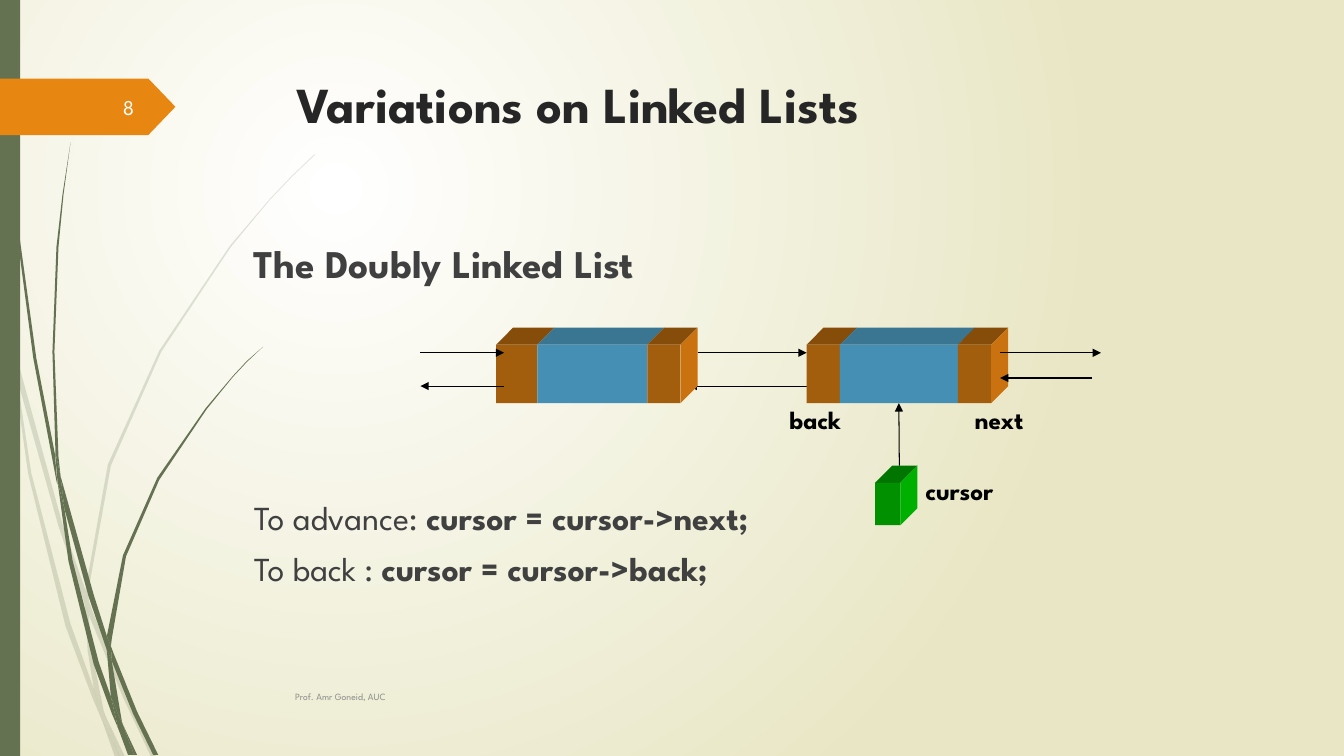
from lxml.etree import SubElement
from pptx import Presentation
from pptx.dml.color import RGBColor
from pptx.enum.shapes import MSO_CONNECTOR, MSO_SHAPE
from pptx.enum.text import MSO_ANCHOR, PP_ALIGN
from pptx.oxml.ns import qn
from pptx.util import Inches, Pt

WIDTH, HEIGHT = 13.33, 7.5
FONT = "League Spartan"
GREEN, ORANGE = "647252", "E78712"
PAPER = ("FFFFFF", "E8E6C4")

# Texts: left, top, width, height, format, paragraphs of (space before, runs)
TITLE = {"size": 36, "bold": True, "color": "262626"}
HEADING = {"size": 28, "bold": True, "color": "404040"}
STEP = {"size": 24, "bold": False, "color": "404040"}
CODE = {**STEP, "bold": True}
LABEL = {"size": 18, "bold": True, "color": "000000"}
FOOTER = {"size": 6.8, "bold": False, "color": "8C8C8C"}
NUMBER = {"size": 15, "bold": False, "color": "FEFFFF"}

BODY = [
    (7.5, [("The Doubly Linked List", HEADING)]),
    (150, [("To advance: ", STEP), ("cursor = cursor->next;", CODE)]),
    (7.5, [("To back : ", STEP), ("cursor = cursor->back;", CODE)]),
]
LABELS = [("next", 9.57, 3.96, 0.73), ("back", 7.73, 3.96, 0.84), ("cursor", 9.08, 4.67, 0.95)]

# Blocks: face colours are front, top, side
POINTER = ("A35E0D", "854C0A", "C9720F")
DATA = ("458FB5", "3A7592", "458FB5")
CURSOR = ("009000", "007600", "00B000")
DEPTH = 0.17
NODE_TOP, NODE_HEIGHT = 3.42, 0.58
FIRST_NODE = (4.92, [(0.41, POINTER), (1.09, DATA), (0.33, POINTER)])
SECOND_NODE = (8, [(0.33, POINTER), (1.17, DATA), (0.33, POINTER)])
CURSOR_BLOCK = (8.68, [(0.25, CURSOR)])
CURSOR_TOP, CURSOR_HEIGHT = 4.79, 0.42

# Links: from x, to x, y
HIDDEN_LINK = (8, 6.83, 3.83)
LINKS = [(6.92, 8, 3.5), (9.92, 10.92, 3.5), (4.17, 5, 3.5), (10.83, 9.92, 3.75), (5, 4.17, 3.83)]

# Grass blades as x, y, x, y, ...
PALE_BLADES = [
    (.11, 3.5, .09, 3.22, 0, 2.82, 0, 2.99, .1, 3.44),
    (.58, 5.22, .84, 5.99, .85, 5.86, .62, 5.2, .14, 3.45, .17, 3.76),
    (.92, 6.07, .88, 5.96, .88, 6.1, 1.23, 6.94, 1.5, 7.51, 1.55, 7.51, 1.27, 6.92),
    (1.19, 7.51, 1.24, 7.51, 1.05, 7.11),
    (.93, 6.83, .7, 6.19, .31, 4.69, .17, 3.76, .11, 3.5, .28, 4.7, .65, 6.21, .92, 6.93,
     1.01, 7.14, .99, 7.07),
    (.84, 5.99, .87, 6.46, .93, 6.83, .96, 6.92, 1.05, 7.11, 1.03, 7.06, .91, 6.46, .88, 6.1,
     .88, 6.08),
    (.88, 5.84, 1.1, 4.62, 1.6, 3.49, 2.29, 2.45, 2.68, 1.98, 2.9, 1.75, 3.12, 1.54, 3.12, 1.53,
     2.89, 1.75, 2.68, 1.97, 2.28, 2.44, 1.58, 3.48, 1.07, 4.61, .85, 5.84, .85, 5.86, .88, 5.96),
    (1.01, 7.14, 1.14, 7.51, 1.19, 7.51),
    (.88, 6.08, .88, 5.96, .85, 5.86, .84, 5.99),
    (.96, 6.92, .93, 6.83, .99, 7.07, 1.01, 7.14, 1.19, 7.51, 1.05, 7.11),
]
DARK_BLADES = [
    (.07, 1.1, .17, 2.33, .33, 3.55, .56, 4.77, .57, 4.81, .55, 4.57, .55, 4.53, .36, 3.55,
     .19, 2.32, .08, 1.09, .05, .48, .04, 0, .03, 0, .04, .48),
    (.88, 5.92, 1.06, 6.45, 1.06, 6.31, .93, 5.9, .6, 4.72, .64, 5.05),
    (1.13, 6.49, 1.1, 6.41, 1.11, 6.56, 1.32, 7.08, 1.52, 7.49, 1.57, 7.49, 1.36, 7.06),
    (1.1, 6.91, .98, 6.57, .72, 5.56, .64, 5.05, .57, 4.77, .68, 5.57, .93, 6.59, 1.11, 7.08,
     1.17, 7.22, 1.16, 7.17),
    (.6, 4.72, .58, 4.53, .54, 3.49, .58, 2.45, .63, 1.93, .7, 1.41, .62, 1.93, .56, 2.45,
     .52, 3.49, .55, 4.49),
    (1.33, 7.49, 1.36, 7.49, 1.22, 7.19),
    (.57, 4.77, .64, 5.05, .6, 4.72, .55, 4.49, .55, 4.53),
    (1.11, 6.33, 1.25, 5.52, 1.58, 4.76, 2.05, 4.06, 2.31, 3.74, 2.45, 3.59, 2.61, 3.44,
     2.45, 3.58, 2.31, 3.73, 2.04, 4.05, 1.56, 4.74, 1.22, 5.51, 1.06, 6.31, 1.1, 6.41),
    (1.17, 7.22, 1.27, 7.49, 1.31, 7.49),
    (1.06, 6.45, 1.1, 6.91, 1.16, 7.06, 1.22, 7.19, 1.21, 7.16, 1.11, 6.56, 1.09, 6.51),
    (1.06, 6.45, 1.09, 6.51, 1.11, 6.56, 1.1, 6.41, 1.06, 6.31),
    (1.16, 7.06, 1.1, 6.91, 1.16, 7.17, 1.17, 7.22, 1.3, 7.49, 1.33, 7.49, 1.22, 7.19),
]

prs = Presentation()
prs.slide_width, prs.slide_height = Inches(WIDTH), Inches(HEIGHT)
slide = prs.slides.add_slide(prs.slide_layouts[6])
shapes = slide.shapes


def rgb(color):
    return RGBColor.from_string(color)


def paint_background():
    """Radial gradient centred a quarter in from the top left."""
    fill = slide.background.fill
    fill.gradient()
    for stop, color in zip(fill.gradient_stops, PAPER):
        stop.color.rgb = rgb(color)
    gradient = slide.element.find(".//" + qn("a:gradFill"))
    gradient.remove(gradient.find(qn("a:lin")))
    circle = SubElement(gradient, qn("a:path"), path="circle")
    SubElement(circle, qn("a:fillToRect"), l="50000", t="50000", r="100000", b="100000")


def paint(shape, color, opacity=100):
    shape.shadow.inherit = False
    shape.fill.solid()
    shape.fill.fore_color.rgb = rgb(color)
    shape.line.fill.background()
    if opacity < 100:
        tint = shape.element.spPr.find(".//" + qn("a:srgbClr"))
        SubElement(tint, qn("a:alpha"), val=str(opacity * 1000))
    return shape


def preset(kind, left, top, width, height, color):
    return paint(shapes.add_shape(kind, *map(Inches, (left, top, width, height))), color)


def outline(coords, color, opacity=100):
    """Closed polygon through flat x, y, x, y, ... inches."""
    points = [(Inches(x), Inches(y)) for x, y in zip(coords[::2], coords[1::2])]
    builder = shapes.build_freeform(*points[0])
    builder.add_line_segments(points[1:], close=True)
    paint(builder.convert_to_shape(), color, opacity)


def blocks(row, top, height):
    """Row of extruded blocks; returns their front faces."""
    left, cells = row
    fronts = []
    back = top - DEPTH
    for width, (front, lid, side) in cells:
        right = left + width
        fronts.append(preset(MSO_SHAPE.RECTANGLE, left, top, width, height, front))
        outline((left, top, left + DEPTH, back, right + DEPTH, back, right, top), lid)
        left = right
    outline((left, top, left + DEPTH, back, left + DEPTH, back + height, left, top + height), side)
    return fronts


def arrow(x1, y1, x2, y2):
    link = shapes.add_connector(MSO_CONNECTOR.STRAIGHT, *map(Inches, (x1, y1, x2, y2)))
    link.line.color.rgb = rgb("000000")
    link.line.width = Pt(0.75)
    SubElement(link.line._get_or_add_ln(), qn("a:tailEnd"), type="triangle")
    SubElement(link.element.spPr, qn("a:effectLst"))
    return link


def write(left, top, width, height, paragraphs, anchor=MSO_ANCHOR.TOP, align=PP_ALIGN.LEFT, wrap=True):
    frame = shapes.add_textbox(*map(Inches, (left, top, width, height))).text_frame
    frame.word_wrap, frame.vertical_anchor = wrap, anchor
    for i, (gap, runs) in enumerate(paragraphs):
        line = frame.add_paragraph() if i else frame.paragraphs[0]
        line.alignment, line.space_before = align, Pt(gap)
        for words, style in runs:
            run = line.add_run()
            run.text = words
            look = {"name": FONT, "size": Pt(style["size"]), "bold": style["bold"]}
            for key, value in look.items():
                setattr(run.font, key, value)
            run.font.color.rgb = rgb(style["color"])


paint_background()
for blades, opacity in ((PALE_BLADES, 20), (DARK_BLADES, 100)):
    for blade in blades:
        outline(blade, GREEN, opacity)
preset(MSO_SHAPE.RECTANGLE, 0, 0, 0.2, HEIGHT, GREEN)
preset(MSO_SHAPE.PENTAGON, 0, 0.78, 1.74, 0.56, ORANGE).adjustments[0] = 0.48

write(2.83, 6.71, 8.33, 0.4, [(0, [("Prof. Amr Goneid, AUC", FOOTER)])], MSO_ANCHOR.MIDDLE)
write(0.58, 0.86, 0.85, 0.4, [(0, [("8", NUMBER)])], MSO_ANCHOR.MIDDLE, PP_ALIGN.RIGHT)
write(2.84, 0.68, 9.75, 1.4, [(0, [("Variations on Linked Lists", TITLE)])])
write(2.42, 2.33, 10.16, 4.13, BODY)

start, end, level = HIDDEN_LINK
arrow(start, level, end, level)
blocks(FIRST_NODE, NODE_TOP, NODE_HEIGHT)
data_cell = blocks(SECOND_NODE, NODE_TOP, NODE_HEIGHT)[1]
for start, end, level in LINKS:
    arrow(start, level, end, level)
blocks(CURSOR_BLOCK, CURSOR_TOP, CURSOR_HEIGHT)
arrow(8.92, CURSOR_TOP - DEPTH, 8.92, NODE_TOP + NODE_HEIGHT).end_connect(data_cell, 2)
for word, left, top, width in LABELS:
    write(left, top, width, 0.4, [(0, [(word, LABEL)])], wrap=False)

prs.save("out.pptx")
